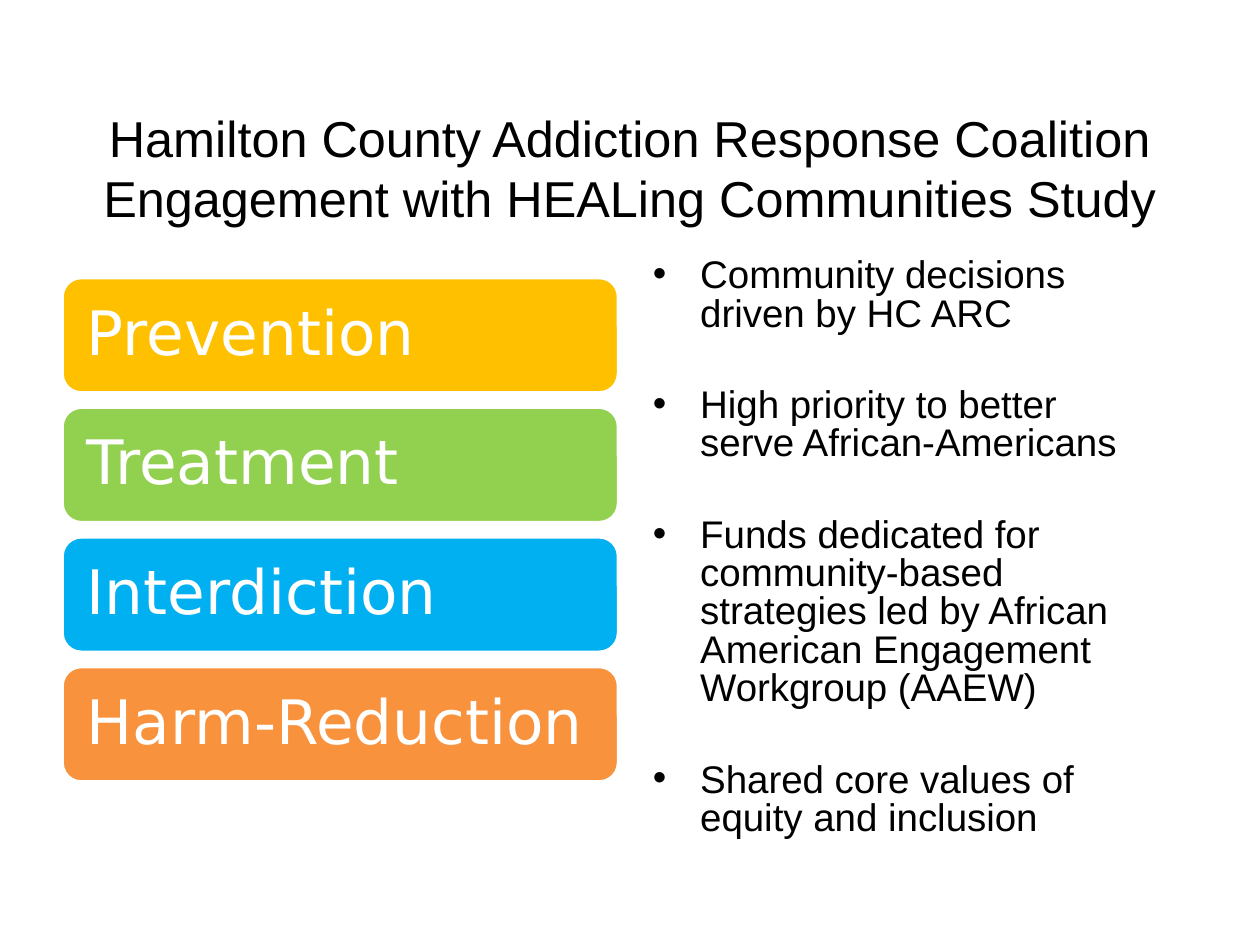
from lxml.etree import SubElement
from pptx import Presentation
from pptx.dml.color import RGBColor
from pptx.enum.shapes import MSO_SHAPE as Shape
from pptx.enum.text import MSO_ANCHOR as Anchor, PP_ALIGN as Align
from pptx.oxml.ns import qn
from pptx.util import Pt

BLACK = RGBColor(0x00, 0x00, 0x00)
WHITE = RGBColor(0xFF, 0xFF, 0xFF)
AMBER = RGBColor(0xFF, 0xC0, 0x00)
GREEN = RGBColor(0x92, 0xD0, 0x50)
BLUE = RGBColor(0x00, 0xB0, 0xF0)
ORANGE = RGBColor(0xF9, 0x92, 0x3D)

HEADING = ("Hamilton County Addiction Response Coalition "
           "Engagement with HEALing Communities Study")
PILLARS = [("Prevention", AMBER), ("Treatment", GREEN),
           ("Interdiction", BLUE), ("Harm-Reduction", ORANGE)]
COMMITMENTS = [
    "Community decisions driven by HC ARC",
    "High priority to better serve African-Americans",
    "Funds dedicated for community-based strategies led by African "
    "American Engagement Workgroup (AAEW)",
    "Shared core values of equity and inclusion",
]


class SlideBuilder:
    title_font = {"name": "Arial", "size": Pt(28.8)}
    bullet_font = {"name": "Arial", "size": Pt(22)}
    pillar_font = {"name": "DejaVu Sans", "size": Pt(35)}

    def __init__(self, slide):
        self.slide = slide

    def set_text(self, paragraph, text, style, color, **layout):
        paragraph.text = text
        for key, value in layout.items():
            setattr(paragraph, key, value)
        for key, value in style.items():
            setattr(paragraph.font, key, value)
        paragraph.font.color.rgb = color

    def title(self, text, left, top, width, height):
        heading = self.slide.shapes.title
        heading.left, heading.top = Pt(left), Pt(top)
        heading.width, heading.height = Pt(width), Pt(height)
        heading.text_frame.vertical_anchor = Anchor.MIDDLE
        self.set_text(heading.text_frame.paragraphs[0], text, self.title_font,
                      BLACK, alignment=Align.CENTER)

    def pillar(self, text, color, left, top, width, height):
        pillar = self.slide.shapes.add_shape(
            Shape.ROUNDED_RECTANGLE, Pt(left), Pt(top), Pt(width), Pt(height))
        pillar.shadow.inherit = False
        pillar.fill.solid()
        pillar.fill.fore_color.rgb = color
        pillar.line.color.rgb = WHITE
        pillar.line.width = Pt(2)
        frame = pillar.text_frame
        frame.word_wrap = True
        frame.vertical_anchor = Anchor.MIDDLE
        for side in ("left", "top", "right", "bottom"):
            setattr(frame, f"margin_{side}", Pt(11))
        self.set_text(frame.paragraphs[0], text, self.pillar_font, WHITE,
                      alignment=Align.LEFT, line_spacing=0.9)

    def bullets(self, items, left, top, width, height, gap):
        box = self.slide.shapes.add_textbox(
            Pt(left), Pt(top), Pt(width), Pt(height))
        frame = box.text_frame
        frame.word_wrap = True
        for index, item in enumerate(items):
            paragraph = frame.add_paragraph() if index else frame.paragraphs[0]
            properties = paragraph._p.get_or_add_pPr()
            properties.set("marL", str(Pt(27)))
            properties.set("indent", str(Pt(-27)))
            SubElement(properties, qn("a:buFont"), typeface="Arial")
            SubElement(properties, qn("a:buChar"), char="•")
            self.set_text(paragraph, item, self.bullet_font, BLACK,
                          line_spacing=0.83,
                          space_before=Pt(gap if index else 0))


def main():
    deck = Presentation()
    deck.slide_width, deck.slide_height = Pt(720), Pt(540)
    builder = SlideBuilder(deck.slides.add_slide(deck.slide_layouts[5]))

    # Heading
    builder.title(HEADING, 35.5, 59, 649, 73)

    # Response pillars, evenly stacked
    for row, (name, color) in enumerate(PILLARS):
        builder.pillar(name, color, 35.5, 158.6 + row * 74.1, 318, 66)

    # Engagement commitments
    builder.bullets(COMMITMENTS, 366, 144, 300, 356, gap=30.3)

    deck.save("out.pptx")


if __name__ == "__main__":
    main()
